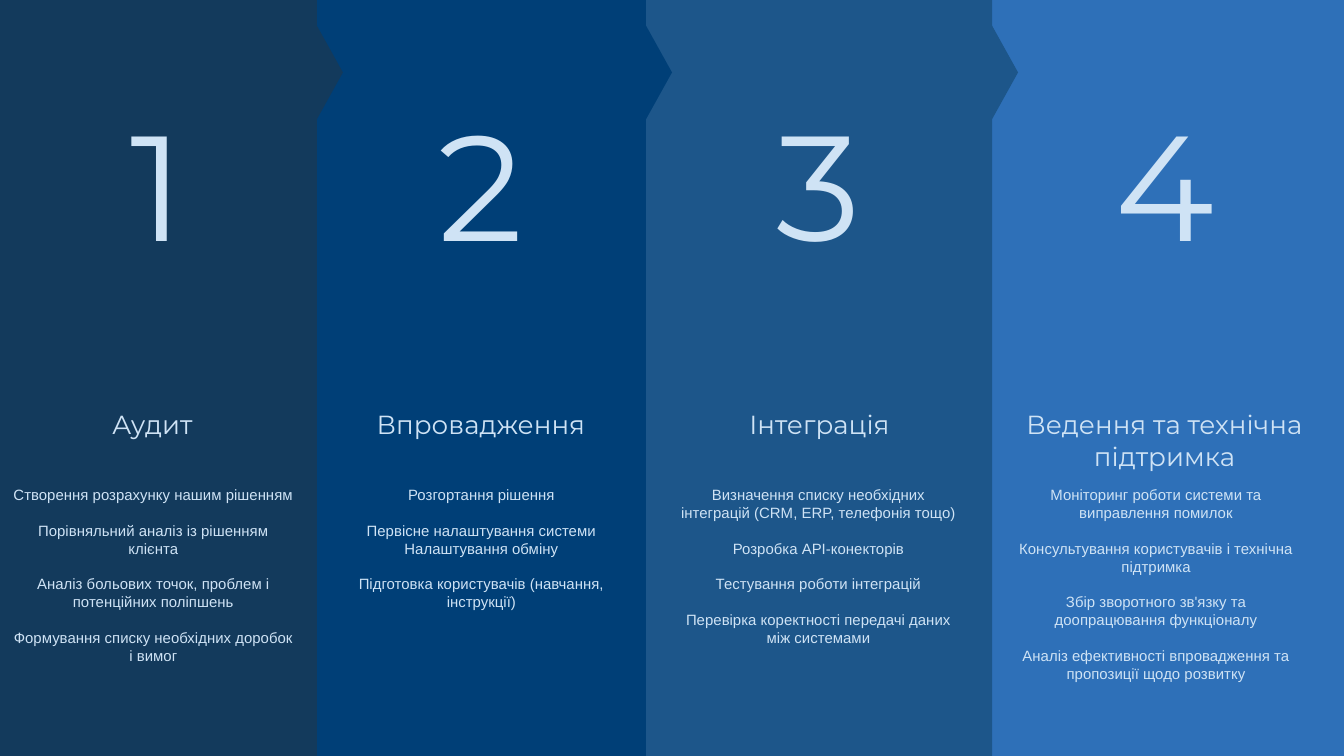
from dataclasses import dataclass

import pptx
import pptx.dml.color
import pptx.enum.shapes
import pptx.enum.text
import pptx.util

Cm = pptx.util.Cm
Pt = pptx.util.Pt
RGB = pptx.dml.color.RGBColor
Shape = pptx.enum.shapes.MSO_SHAPE


@dataclass(frozen=True)
class Theme:
    text: RGB = RGB(0xCF, 0xE3, 0xF5)
    heading_font: str = "Montserrat"
    body_font: str = "Arial"
    number_size: float = 80
    title_size: float = 14
    body_size: float = 8
    step_gap: float = 9.5


@dataclass(frozen=True)
class Stage:
    """One column; lengths in cm. A line break in a step starts a paragraph without a gap."""
    title: str
    left: float
    right: float
    fill: RGB
    number_centre: float
    title_centre: float
    title_width: float
    title_height: float
    body_left: float
    body_height: float
    steps: tuple[str, ...]


THEME = Theme()
PAGE_WIDTH, PAGE_HEIGHT = 25.4, 14.29
NUMBER_TOP, NUMBER_WIDTH, NUMBER_HEIGHT = 1.61, 3.3, 3.68
TITLE_TOP = 7.6
BODY_TOP, BODY_WIDTH = 9.06, 5.8
ARROW_WIDTH, ARROW_HEIGHT, ARROW_MIDDLE, ARROW_OFFSET = 1.8, 0.5, 1.37, 0.24

STAGES = (
    Stage("Аудит", 0, 5.99, RGB(0x13, 0x3A, 0x5C), 2.97, 2.88, 3.3, 0.86, 0, 3.68, (
        "Створення розрахунку нашим рішенням",
        "Порівняльний аналіз із рішенням клієнта",
        "Аналіз больових точок, проблем і потенційних поліпшень",
        "Формування списку необхідних доробок і вимог",
    )),
    Stage("Впровадження", 5.99, 12.21, RGB(0x00, 0x3F, 0x77),
          9.09, 9.09, 4.83, 0.86, 6.2, 2.64, (
              "Розгортання рішення",
              "Первісне налаштування системи\nНалаштування обміну",
              "Підготовка користувачів (навчання, інструкції)",
          )),
    Stage("Інтеграція", 12.21, 18.75, RGB(0x1D, 0x56, 0x8A),
          15.48, 15.49, 5.18, 0.86, 12.57, 3.33, (
              "Визначення списку необхідних інтеграцій (CRM, ERP, телефонія тощо)",
              "Розробка API-конекторів",
              "Тестування роботи інтеграцій",
              "Перевірка коректності передачі даних між системами",
          )),
    Stage("Ведення та технічна підтримка", 18.75, PAGE_WIDTH, RGB(0x2E, 0x70, 0xB8),
          22.02, 22.01, 6.12, 1.45, 18.95, 4.01, (
              "Моніторинг роботи системи та виправлення помилок",
              "Консультування користувачів і технічна підтримка",
              "Збір зворотного зв'язку та доопрацювання функціоналу",
              "Аналіз ефективності впровадження та пропозиції щодо розвитку",
          )),
)


def add_filled(shapes, kind: Shape, left: float, top: float, width: float,
               height: float, fill: RGB):
    shape = shapes.add_shape(kind, Cm(left), Cm(top), Cm(width), Cm(height))
    shape.shadow.inherit = False
    shape.fill.solid()
    shape.fill.fore_color.rgb = fill
    shape.line.fill.background()
    return shape


def add_text(shapes, steps: tuple[str, ...], left: float, top: float, width: float,
             height: float, font: str, size: float) -> None:
    """Add a centred text box with a gap before every step but the first."""
    box = shapes.add_textbox(Cm(left), Cm(top), Cm(width), Cm(height))
    frame = box.text_frame
    frame.word_wrap = True
    lines = [(line, step_index > 0 and line_index == 0)
             for step_index, step in enumerate(steps)
             for line_index, line in enumerate(step.split("\n"))]
    for index, (line, has_gap) in enumerate(lines):
        para = frame.add_paragraph() if index else frame.paragraphs[0]
        para.text = line
        para.alignment = pptx.enum.text.PP_ALIGN.CENTER
        if has_gap:
            para.space_before = Pt(THEME.step_gap)
        para.font.name = font
        para.font.size = Pt(size)
        para.font.color.rgb = THEME.text


def add_stage(page, number: int, stage: Stage) -> None:
    shapes = page.shapes.add_group_shape().shapes
    add_filled(shapes, Shape.RECTANGLE, stage.left, 0, stage.right - stage.left,
               PAGE_HEIGHT, stage.fill)
    add_text(shapes, (str(number),), stage.number_centre - NUMBER_WIDTH / 2, NUMBER_TOP,
             NUMBER_WIDTH, NUMBER_HEIGHT, THEME.heading_font, THEME.number_size)
    add_text(shapes, (stage.title,), stage.title_centre - stage.title_width / 2, TITLE_TOP,
             stage.title_width, stage.title_height, THEME.heading_font, THEME.title_size)
    add_text(shapes, stage.steps, stage.body_left, BODY_TOP, BODY_WIDTH,
             stage.body_height, THEME.body_font, THEME.body_size)
    if number < len(STAGES):
        arrow = add_filled(shapes, Shape.ISOSCELES_TRIANGLE,
                           stage.right + ARROW_OFFSET - ARROW_WIDTH / 2,
                           ARROW_MIDDLE - ARROW_HEIGHT / 2,
                           ARROW_WIDTH, ARROW_HEIGHT, stage.fill)
        arrow.rotation = 90


def main() -> None:
    deck = pptx.Presentation()
    deck.slide_width, deck.slide_height = Cm(PAGE_WIDTH), Cm(PAGE_HEIGHT)
    page = deck.slides.add_slide(deck.slide_layouts[6])
    page.background.fill.solid()
    page.background.fill.fore_color.rgb = THEME.text
    # Right to left, so that each arrow lies over the next column.
    for number, stage in reversed(list(enumerate(STAGES, start=1))):
        add_stage(page, number, stage)
    deck.save("out.pptx")


if __name__ == "__main__":
    main()
